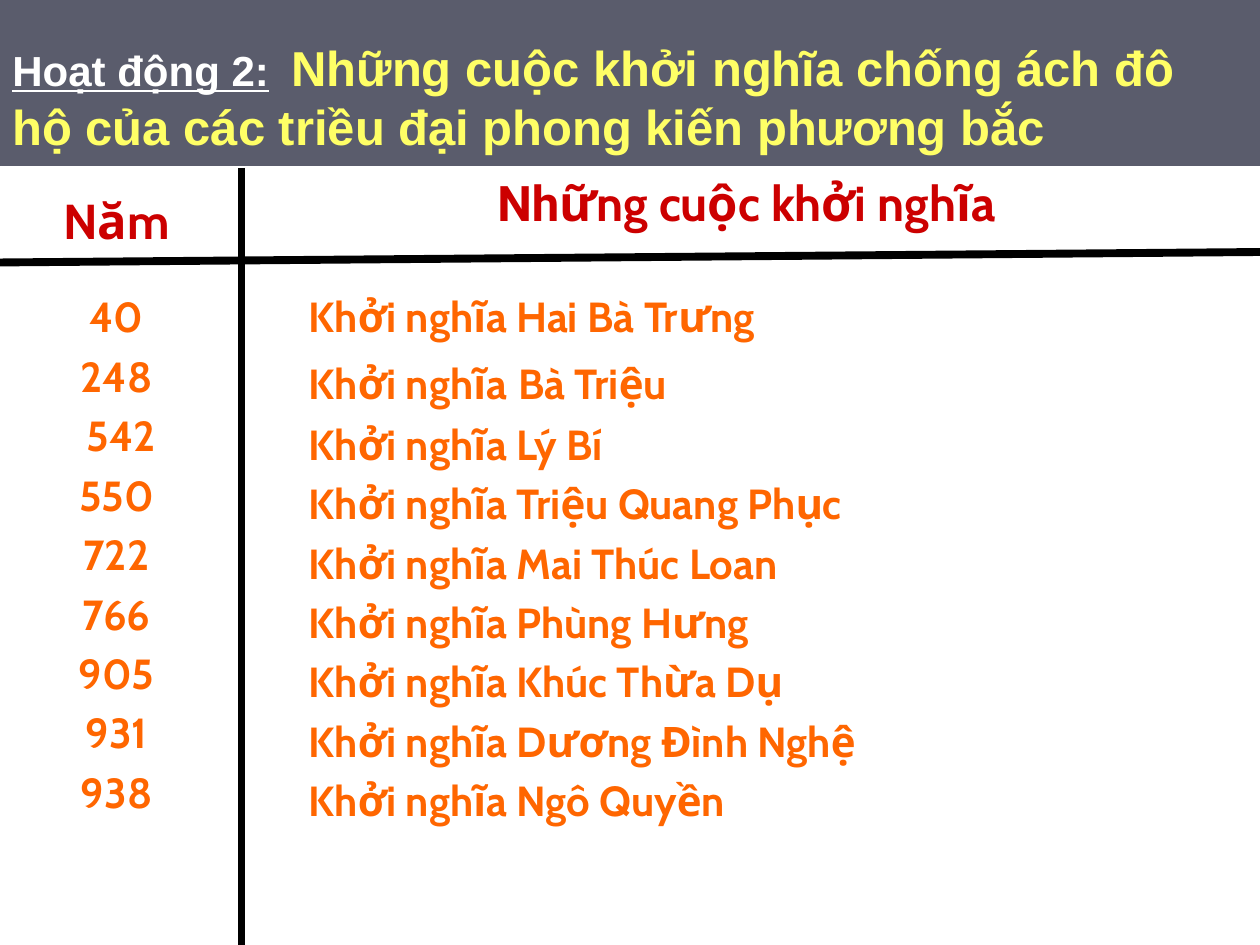
import pptx
import pptx.util
import pptx.dml.color
import pptx.enum.shapes
import pptx.enum.text
import pptx.oxml
import pptx.oxml.ns
from pptx.util import Pt

COLORS = {
    "background": "5A5C6C",
    "white": "FFFFFF",
    "title": "FFFF66",
    "header": "CC0000",
    "entry": "FF6600",
    "line": "000000",
}
UPRISINGS = [
    ("40", "Hai Bà Trưng"),
    ("248", "Bà Triệu"),
    (" 542", "Lý Bí"),
    ("550", "Triệu Quang Phục"),
    ("722", "Mai Thúc Loan"),
    ("766", "Phùng Hưng"),
    ("905", "Khúc Thừa Dụ"),
    ("931", "Dương Đình Nghệ"),
    ("938", "Ngô Quyền"),
]
CENTER = pptx.enum.text.PP_ALIGN.CENTER


def rgb(name):
    return pptx.dml.color.RGBColor.from_string(COLORS[name])


def add_run(paragraph, text, size, color, font="Cabin"):
    run = paragraph.add_run()
    run.text = text
    run.font.size = Pt(size)
    run.font.name = font
    run.font.bold = True
    run.font.color.rgb = rgb(color)
    return run


presentation = pptx.Presentation()
presentation.slide_width = Pt(720)
presentation.slide_height = Pt(540)
slide = presentation.slides.add_slide(presentation.slide_layouts[6])
slide.background.fill.solid()
slide.background.fill.fore_color.rgb = rgb("background")

title = slide.shapes.add_textbox(Pt(0), Pt(18), Pt(702), Pt(74))
title.text_frame.word_wrap = True
paragraph = title.text_frame.paragraphs[0]
add_run(paragraph, "Hoạt động 2:", 24, "white", "Arial").font.underline = True
add_run(paragraph, " ", 18, "white", "Arial")
add_run(paragraph, " ", 28, "white", "Arial")
add_run(paragraph, "Những cuộc khởi nghĩa chống ách đô hộ của các triều đại phong kiến phương bắc", 28, "title", "Arial")

table = slide.shapes.add_table(2, 2, Pt(0), Pt(95.8), Pt(720), Pt(444.2)).table
table.first_row = False
table.horz_banding = False
for column, width in zip(table.columns, (133.2, 586.8)):
    column.width = Pt(width)
for row, height in zip(table.rows, (67.7, 376.5)):
    row.height = Pt(height)

for row in range(2):
    for column in range(2):
        cell = table.cell(row, column)
        outer_sides = ("L" if column == 0 else "R", "T" if row == 0 else "B")
        for side in "LRTB":
            width = Pt(2.25 if side in outer_sides else 1)
            cell._tc.get_or_add_tcPr().append(pptx.oxml.parse_xml(
                f'<a:ln{side} {pptx.oxml.ns.nsdecls("a")} w="{width}"><a:solidFill>'
                f'<a:srgbClr val="{COLORS["white"]}"/></a:solidFill></a:ln{side}>'))
        cell.fill.solid()
        cell.fill.fore_color.rgb = rgb("white")

year_header = table.cell(0, 0).text_frame.paragraphs[0]
year_header.alignment = CENTER
year_header.line_spacing = 1.3
add_run(year_header, "Năm", 28, "header")
uprising_header = table.cell(0, 1).text_frame.paragraphs[0]
uprising_header.alignment = CENTER
add_run(uprising_header, "Nh", 28, "header", "Roboto")
add_run(uprising_header, "ững cuộc khởi nghĩa", 28, "header")

year_frame = table.cell(1, 0).text_frame
uprising_frame = table.cell(1, 1).text_frame
for index, (year, leader) in enumerate(UPRISINGS):
    for frame in (year_frame, uprising_frame):
        paragraph = frame.add_paragraph() if index else frame.paragraphs[0]
        if index:
            paragraph.space_before = Pt(4.8)
        if frame is year_frame:
            paragraph.alignment = CENTER
            add_run(paragraph, year, 24, "entry")
        else:
            properties = paragraph._p.get_or_add_pPr()
            properties.set("marL", str(Pt(41)))
            properties.set("indent", str(Pt(-5)))
            add_run(paragraph, "Khởi nghĩa", 24, "entry")
            add_run(paragraph, " ", 28 if leader == "Bà Triệu" else 24, "entry")
            add_run(paragraph, leader, 24, "entry")

for start_x, start_y, end_x, end_y in ((138, 96, 138, 540), (720, 144, 0, 150)):
    line = slide.shapes.add_connector(
        pptx.enum.shapes.MSO_CONNECTOR.STRAIGHT, Pt(start_x), Pt(start_y), Pt(end_x), Pt(end_y))
    line.line.color.rgb = rgb("line")
    line.line.width = Pt(4.5)
    line._element.spPr.append(pptx.oxml.parse_xml(f'<a:effectLst {pptx.oxml.ns.nsdecls("a")}/>'))

presentation.save("out.pptx")
